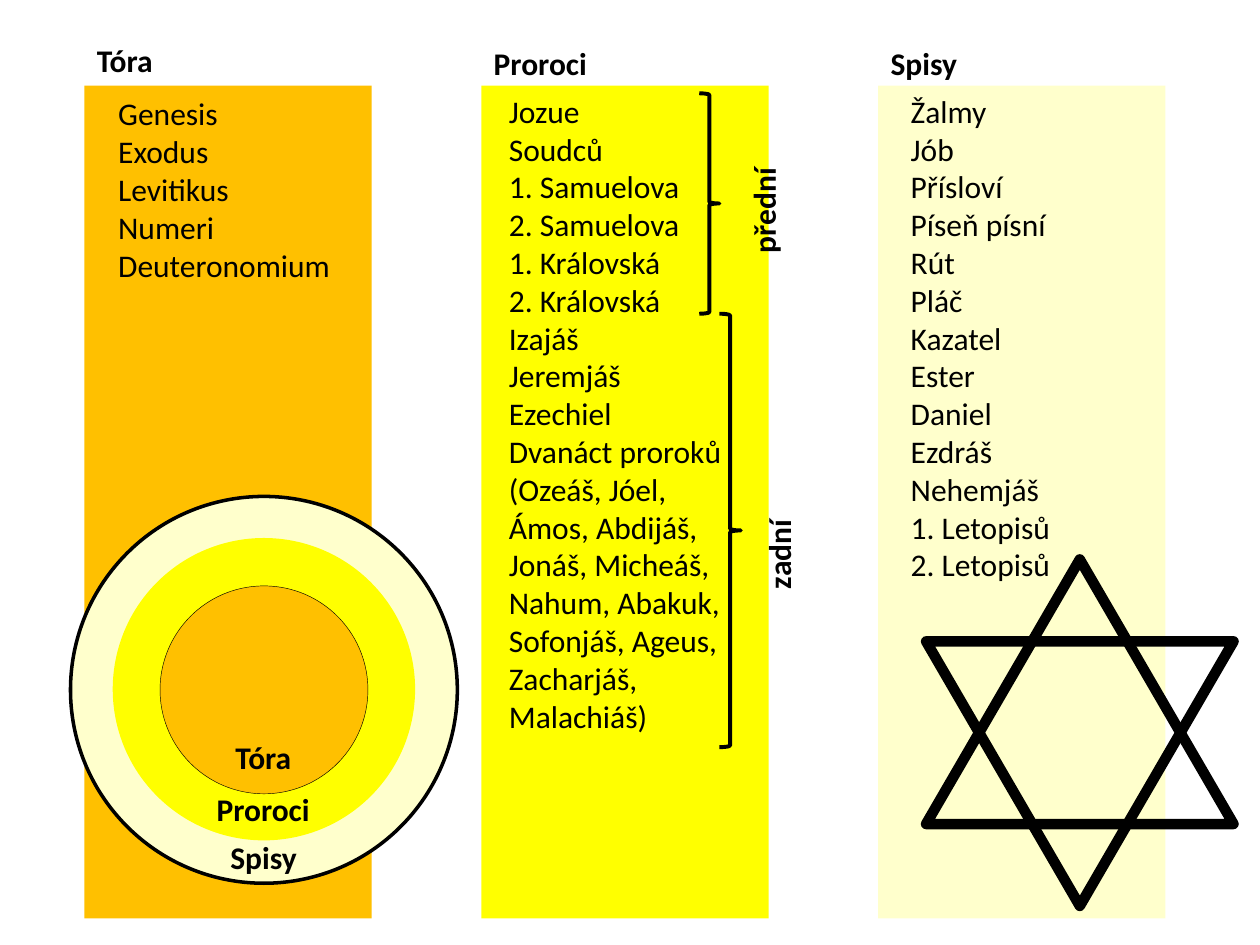
from dataclasses import dataclass

from lxml.etree import SubElement
from pptx import Presentation
from pptx.dml.color import RGBColor
from pptx.enum.shapes import MSO_SHAPE as Shape
from pptx.enum.text import MSO_AUTO_SIZE as AutoSize, PP_ALIGN as Align
from pptx.oxml.ns import qn
from pptx.util import Inches, Pt


@dataclass(frozen=True)
class Theme:
    font: str = "Calibri"
    size: int = 18
    ink: str = "000000"
    torah: str = "FFC000"
    prophets: str = "FFFF00"
    writings: str = "FFFFCC"
    thin: float = 0.25
    ring: float = 2
    brace: float = 2.25
    star: float = 6


THEME = Theme()
LINE_HEIGHT = 0.4

TORAH_BOOKS = ["Genesis", "Exodus", "Levitikus", "Numeri\vDeuteronomium"]
PROPHETS_BOOKS = [
    "Jozue", "Soudců", "1. Samuelova", "2. Samuelova", "1. Královská",
    "2. Královská", "Izajáš", "Jeremjáš", "Ezechiel", "Dvanáct proroků",
    "(Ozeáš, Jóel,",
    "Ámos, Abdijáš, Jonáš, Micheáš, Nahum, Abakuk, Sofonjáš, Ageus, "
    "Zacharjáš, Malachiáš)",
]
WRITINGS_BOOKS = [
    "Žalmy", "Jób", "Přísloví", "Píseň písní", "Rút", "Pláč", "Kazatel",
    "Ester", "Daniel", "Ezdráš", "Nehemjáš", "1. Letopisů", "2. Letopisů",
]
LABEL_WIDTHS = {"Tóra": 0.65, "Proroci": 0.95, "Spisy": 0.73}


def apply_format(target, values):
    for name, value in values.items():
        setattr(target, name, value)


def add_figure(slide, preset, box, fill=None, line_width=None, rotation=0):
    figure = slide.shapes.add_shape(preset, *map(Inches, box))
    figure.shadow.inherit = False
    figure.rotation = rotation
    if fill:
        figure.fill.solid()
        figure.fill.fore_color.rgb = RGBColor.from_string(fill)
    else:
        figure.fill.background()
    if line_width:
        figure.line.color.rgb = RGBColor.from_string(THEME.ink)
        figure.line.width = Pt(line_width)
    else:
        figure.line.fill.background()
    return figure


def add_text(slide, box, lines, bold=False, wrap=True, align=Align.LEFT, rotation=0):
    text = slide.shapes.add_textbox(*map(Inches, box))
    text.rotation = rotation
    frame = text.text_frame
    frame.text = "\n".join(lines)
    apply_format(frame, {"word_wrap": wrap, "auto_size": AutoSize.SHAPE_TO_FIT_TEXT})
    font_format = {"name": THEME.font, "size": Pt(THEME.size), "bold": bold}
    for paragraph in frame.paragraphs:
        paragraph.alignment = align
        for run in paragraph.runs:
            apply_format(run.font, font_format)
            run.font.color.rgb = RGBColor.from_string(THEME.ink)


def add_label(slide, left, top, label):
    box = (left, top, LABEL_WIDTHS[label], LINE_HEIGHT)
    add_text(slide, box, [label], bold=True, wrap=False)


def add_column(slide, box, heading, heading_top, books, books_box, fill):
    left, top, width, height = box
    add_figure(slide, Shape.RECTANGLE, box, fill)
    add_label(slide, left, heading_top, heading)
    inset, drop, books_width, books_height = books_box
    add_text(slide, (left + inset, top + drop, books_width, books_height), books)


def add_circles(slide, box):
    left, top, size, _ = box
    center = left + size / 2
    rings = [
        ("Spisy", 0, size, THEME.writings, THEME.ring, 2.66),
        ("Proroci", 0.33, 2.4, THEME.prophets, None, 2.28),
        ("Tóra", 0.71, 1.65, THEME.torah, THEME.thin, 1.87),
    ]
    for label, drop, diameter, fill, line_width, label_drop in rings:
        ring_box = (center - diameter / 2, top + drop, diameter, diameter)
        add_figure(slide, Shape.OVAL, ring_box, fill, line_width)
        label_left = center - LABEL_WIDTHS[label] / 2
        add_label(slide, label_left, top + label_drop, label)


def add_star(slide, box):
    left, top, width, height = box
    triangle_height = 2.1
    for drop, rotation in [(0, 0), (height - triangle_height, 180)]:
        triangle_box = (left, top + drop, width, triangle_height)
        triangle = add_figure(slide, Shape.ISOSCELES_TRIANGLE, triangle_box,
                              line_width=THEME.star, rotation=rotation)
        SubElement(triangle.line._get_or_add_ln(), qn("a:round"))


def add_division(slide, box, label, label_center):
    label_width = 1.1
    center_x, center_y = label_center
    add_figure(slide, Shape.RIGHT_BRACE, box, line_width=THEME.brace)
    label_box = (center_x - label_width / 2, center_y - LINE_HEIGHT / 2,
                 label_width, LINE_HEIGHT)
    add_text(slide, label_box, [label], bold=True, align=Align.CENTER, rotation=270)


def main():
    deck = Presentation()
    apply_format(deck, {"slide_width": Inches(10), "slide_height": Inches(7.5)})
    slide = deck.slides.add_slide(deck.slide_layouts[6])
    columns = [
        ("Tóra", 0.28, TORAH_BOOKS, (0.17, 0.02, 1.96, 1.62), THEME.torah),
        ("Proroci", 0.3, PROPHETS_BOOKS, (0.12, 0, 2.01, 5.25), THEME.prophets),
        ("Spisy", 0.3, WRITINGS_BOOKS, (0.16, 0, 1.96, 4.04), THEME.writings),
    ]
    for index, column in enumerate(columns):
        add_column(slide, (0.67 + 3.15 * index, 0.68, 2.28, 6.61), *column)
    add_circles(slide, (0.56, 3.94, 3.07, 3.07))
    add_star(slide, (7.35, 4.44, 2.44, 2.75))
    add_division(slide, (5.55, 0.74, 0.16, 1.75), "přední", (6.06, 1.67))
    add_division(slide, (5.71, 2.49, 0.17, 3.44), "zadní", (6.18, 4.4))
    deck.save("out.pptx")


if __name__ == "__main__":
    main()
